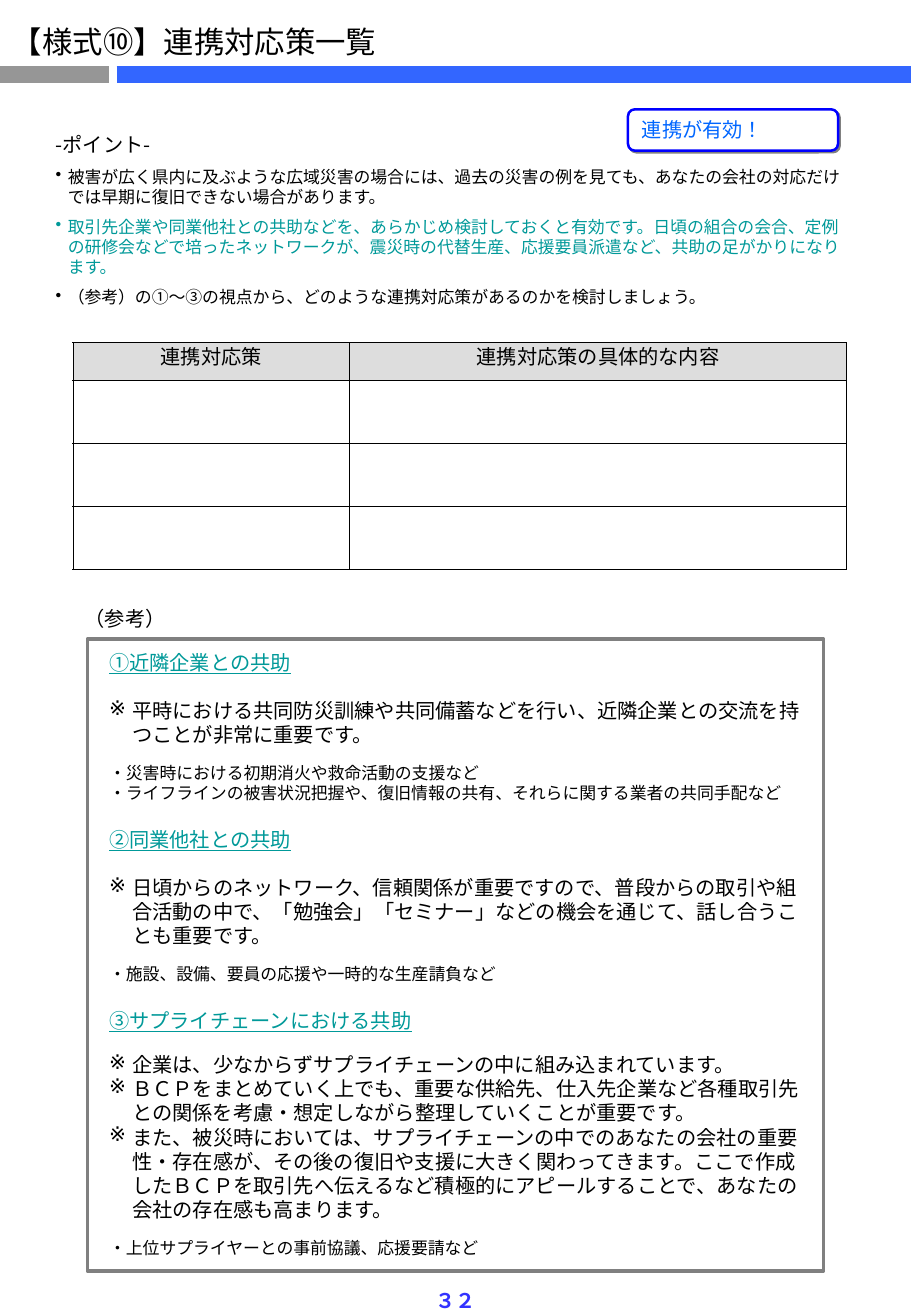
"""Build the form page listing cooperative measures for business continuity."""
from dataclasses import dataclass

from lxml.etree import SubElement
from pptx import Presentation
from pptx.dml.color import RGBColor
from pptx.enum.lang import MSO_LANGUAGE_ID as Language
from pptx.enum.shapes import MSO_CONNECTOR as Connector, MSO_SHAPE as Shape
from pptx.enum.text import MSO_ANCHOR as Anchor, PP_ALIGN as Align
from pptx.oxml import parse_xml
from pptx.oxml.ns import nsdecls, qn
from pptx.util import Inches, Pt


@dataclass(frozen=True)
class Theme:
    font: str = "Noto Sans CJK JP"
    black: str = "000000"
    teal: str = "009999"
    gray: str = "808080"
    bar_gray: str = "969696"
    bar_blue: str = "3366FF"
    header: str = "DDDDDD"
    white: str = "FFFFFF"
    callout_line: str = "0000FF"
    callout_text: str = "0066FF"
    number: str = "3333FF"
    title: int = 18
    body: int = 12
    small: int = 10
    leading: float = 1.19


theme = Theme()


def write(frame, text, size=theme.body, color=theme.black, bold=False, underline=False,
          align=Align.LEFT, indent=0, bullet=None, before=0, after=0):
    """Add one formatted paragraph to a text frame."""
    frame.word_wrap = True
    para = frame.paragraphs[0]
    if para.runs:
        para = frame.add_paragraph()
    para.alignment = align
    para.line_spacing = Pt(size * theme.leading)
    para.space_before, para.space_after = Pt(before), Pt(after)
    properties = para._p.get_or_add_pPr()
    properties.set("marL", str(Inches(indent)))
    properties.set("indent", str(Inches(-indent)))
    if bullet:
        SubElement(properties, qn("a:buChar")).set("char", bullet)
    span = para.add_run()
    span.text = text
    font = span.font
    font.name, font.size, font.bold, font.underline = theme.font, Pt(size), bold, underline
    font.language_id = Language.JAPANESE
    font.color.rgb = RGBColor.from_string(color)
    SubElement(span._r.get_or_add_rPr(), qn("a:ea")).set("typeface", theme.font)


def add_frame(left, top, width, height):
    """Add a text box and return its text frame."""
    box = page.shapes.add_textbox(Inches(left), Inches(top), Inches(width), Inches(height))
    return box.text_frame


deck = Presentation()
deck.slide_width, deck.slide_height = Inches(7.5), Inches(10.83)
page = deck.slides.add_slide(deck.slide_layouts[6])

for start, end, color in [(0, 0.9, theme.bar_gray), (0.96, 7.5, theme.bar_blue)]:
    bar = page.shapes.add_connector(
        Connector.STRAIGHT, Inches(start), Inches(0.61), Inches(end), Inches(0.61))
    bar.line.color.rgb = RGBColor.from_string(color)
    bar.line.width = Pt(10)
    SubElement(bar._element.spPr, qn("a:effectLst"))

write(add_frame(0, 0.14, 5, 0.4), "【様式⑩】連携対応策一覧", size=theme.title)

points = add_frame(0.36, 1.04, 6.77, 1.57)
write(points, "-ポイント-", indent=0.1, after=6)
for text, color in [
    ("被害が広く県内に及ぶような広域災害の場合には、過去の災害の例を見ても、"
     "あなたの会社の対応だけでは早期に復旧できない場合があります。", theme.black),
    ("取引先企業や同業他社との共助などを、あらかじめ検討しておくと有効です。"
     "日頃の組合の会合、定例の研修会などで培ったネットワークが、"
     "震災時の代替生産、応援要員派遣など、共助の足がかりになります。", theme.teal),
    ("（参考）の①～③の視点から、どのような連携対応策があるのかを検討しましょう。",
     theme.black),
]:
    write(points, text, size=theme.small, color=color, indent=0.1, bullet="•", after=6)

sections = [
    (5.3, 1.38, "①近隣企業との共助", theme.body,
     ["平時における共同防災訓練や共同備蓄などを行い、"
      "近隣企業との交流を持つことが非常に重要です。"],
     ["・災害時における初期消火や救命活動の支援など",
      "・ライフラインの被害状況把握や、復旧情報の共有、それらに関する業者の共同手配など"]),
    (6.76, 1.41, "②同業他社との共助", theme.body,
     ["日頃からのネットワーク、信頼関係が重要ですので、普段からの取引や組合活動の中で、"
      "「勉強会」「セミナー」などの機会を通じて、話し合うことも重要です。"],
     ["・施設、設備、要員の応援や一時的な生産請負など"]),
    (8.25, 2.19, "③サプライチェーンにおける共助", theme.small,
     ["企業は、少なからずサプライチェーンの中に組み込まれています。",
      "ＢＣＰをまとめていく上でも、重要な供給先、仕入先企業など各種取引先との関係を"
      "考慮・想定しながら整理していくことが重要です。",
      "また、被災時においては、サプライチェーンの中でのあなたの会社の重要性・存在感が、"
      "その後の復旧や支援に大きく関わってきます。ここで作成したＢＣＰを取引先へ伝えるなど"
      "積極的にアピールすることで、あなたの会社の存在感も高まります。"],
     ["・上位サプライヤーとの事前協議、応援要請など"]),
]
for top, height, heading, gap, notes, examples in sections:
    section = add_frame(0.8, top, 5.9, height)
    write(section, heading, color=theme.teal, underline=True, indent=0.19)
    for index, note in enumerate(notes):
        write(section, note, indent=0.19, bullet="※",
              before=0 if index else gap * theme.leading)
    for index, example in enumerate(examples):
        write(section, example, size=theme.small, indent=0.19, before=0 if index else 9.5)

column_widths = [2.28, 4.09]
row_heights = [0.31, 0.52, 0.52, 0.52]
headings = ["連携対応策", "連携対応策の具体的な内容"]
table = page.shapes.add_table(
    len(row_heights), len(column_widths), Inches(0.6), Inches(2.82),
    Inches(sum(column_widths)), Inches(sum(row_heights))).table
for column, width in zip(table.columns, column_widths):
    column.width = Inches(width)
for row, height in zip(table.rows, row_heights):
    row.height = Inches(height)
for cell in table.iter_cells():
    cell.margin_top = cell.margin_bottom = Inches(0.03)
    cell.fill.background()
    for position, side in enumerate(["lnL", "lnR", "lnT", "lnB"]):
        cell._tc.get_or_add_tcPr().insert(position, parse_xml(
            f'<a:{side} {nsdecls("a")} w="{Pt(0.5)}"><a:solidFill>'
            f'<a:srgbClr val="{theme.black}"/></a:solidFill></a:{side}>'))
for cell, heading in zip(table.rows[0].cells, headings):
    cell.fill.solid()
    cell.fill.fore_color.rgb = RGBColor.from_string(theme.header)
    write(cell.text_frame, heading, align=Align.CENTER, before=2)

write(add_frame(3.25, 10.55, 1, 0.31), "３２", color=theme.number, bold=True,
      align=Align.CENTER)

callout = page.shapes.add_shape(
    Shape.ROUNDED_RECTANGLE, Inches(5.17), Inches(0.9), Inches(1.73), Inches(0.34))
callout.adjustments[0] = 0.167
callout.fill.solid()
callout.fill.fore_color.rgb = RGBColor.from_string(theme.white)
callout.line.color.rgb = RGBColor.from_string(theme.callout_line)
callout.line.width = Pt(1.5)
callout.shadow.inherit = False
callout._element.spPr.find(qn("a:effectLst")).append(parse_xml(
    f'<a:outerShdw {nsdecls("a")} dist="{Pt(1.4)}" dir="2700000" algn="ctr" rotWithShape="0">'
    f'<a:srgbClr val="{theme.gray}"/></a:outerShdw>'))
callout.text_frame.vertical_anchor = Anchor.MIDDLE
write(callout.text_frame, "連携が有効！", color=theme.callout_text)

write(add_frame(0.6, 4.94, 1.1, 0.31), "（参考）")

border = page.shapes.add_shape(
    Shape.RECTANGLE, Inches(0.72), Inches(5.26), Inches(6.06), Inches(5.2))
border.fill.background()
border.line.color.rgb = RGBColor.from_string(theme.gray)
border.line.width = Pt(2.25)
border.shadow.inherit = False

deck.save("out.pptx")
